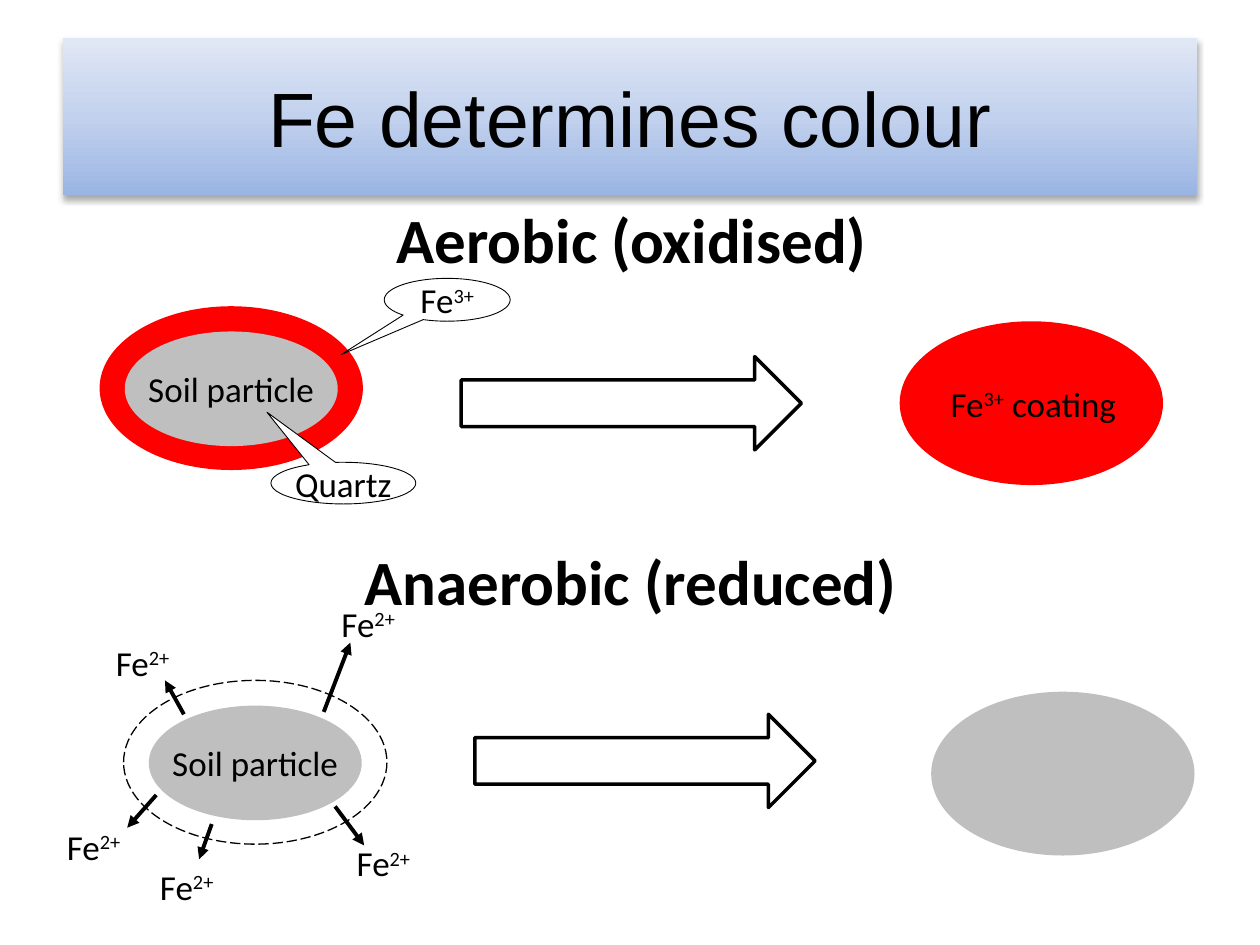
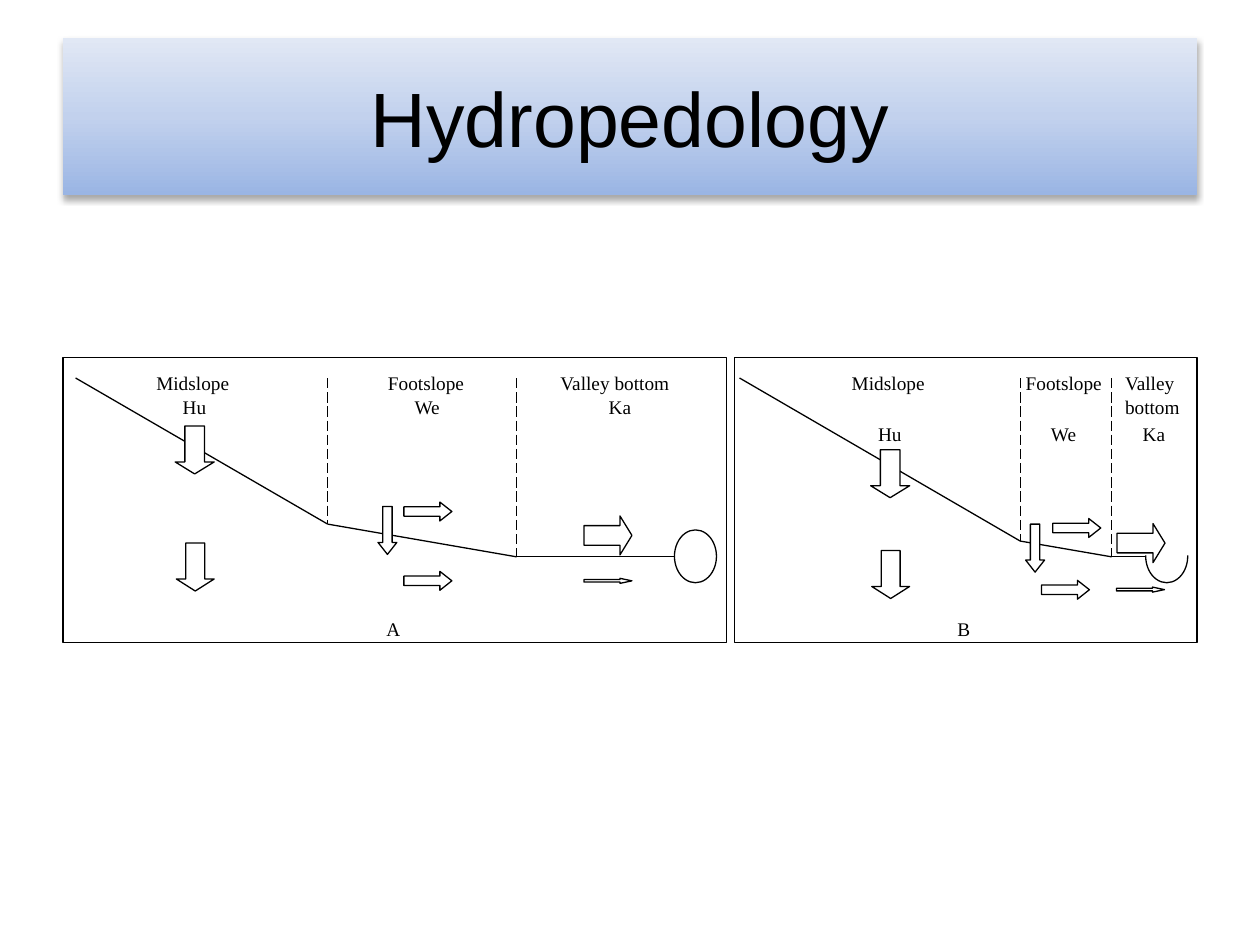
from copy import deepcopy
from itertools import pairwise

from lxml import etree
from pptx import Presentation
from pptx.dml.color import RGBColor
from pptx.enum.dml import MSO_LINE
from pptx.enum.shapes import MSO_CONNECTOR, MSO_SHAPE
from pptx.enum.text import MSO_ANCHOR, MSO_AUTO_SIZE, PP_ALIGN
from pptx.oxml.ns import qn
from pptx.util import Pt

RECT, ELLIPSE = MSO_SHAPE.RECTANGLE, MSO_SHAPE.OVAL
CALLOUT = MSO_SHAPE.OVAL_CALLOUT
DOWN, RIGHT = MSO_SHAPE.DOWN_ARROW, MSO_SHAPE.RIGHT_ARROW
STRAIGHT = MSO_CONNECTOR.STRAIGHT
DASHED = MSO_LINE.LONG_DASH
LEFT, CENTER = PP_ALIGN.LEFT, PP_ALIGN.CENTER
TOP, MIDDLE = MSO_ANCHOR.TOP, MSO_ANCHOR.MIDDLE
GROW, FIXED = MSO_AUTO_SIZE.SHAPE_TO_FIT_TEXT, MSO_AUTO_SIZE.NONE

COLORS = {
    "ink": "000000", "paper": "FFFFFF", "iron": "FF0000", "soil": "BFBFBF",
    "band_low": "9AB5E4", "band_mid": "C2D1ED", "band_high": "E1E8F5",
}
FORMATS = {
    "title": {"name": "Arial", "size": Pt(44)},
    "heading": {"name": "Calibri", "size": Pt(36), "bold": True},
    "body": {"name": "Calibri", "size": Pt(20)},
    "small": {"name": "Times New Roman", "size": Pt(11)},
}
DEFAULT_INSET = (7.2, 3.6)
FLOW_LENGTH, FLOW_HEAD = 27.4, 6.84


class Deck:
    """Holds the style and the current slide."""

    def __init__(self):
        self.file = Presentation()
        self.file.slide_width, self.file.slide_height = Pt(720), Pt(540)
        self.slide = None

    def new_slide(self):
        self.slide = self.file.slides.add_slide(self.file.slide_layouts[6])

    def color(self, name):
        return RGBColor.from_string(COLORS[name])

    def fill_text(self, shape, text, style, align=CENTER, anchor=MIDDLE,
                  inset=DEFAULT_INSET, wrap=False, grow=False):
        """Put text in a shape; parts between ^ signs are raised."""
        frame = shape.text_frame
        layout = {
            "word_wrap": wrap, "vertical_anchor": anchor,
            "margin_left": Pt(inset[0]), "margin_right": Pt(inset[0]),
            "margin_top": Pt(inset[1]), "margin_bottom": Pt(inset[1]),
            "auto_size": GROW if grow else FIXED,
        }
        for key, value in layout.items():
            setattr(frame, key, value)
        for number, content in enumerate(text.split("\n")):
            paragraph = frame.add_paragraph() if number else frame.paragraphs[0]
            paragraph.alignment = align
            for part, piece in enumerate(content.split("^")):
                if not piece:
                    continue
                run = paragraph.add_run()
                run.text = piece
                for key, value in FORMATS[style].items():
                    setattr(run.font, key, value)
                run.font.color.rgb = self.color("ink")
                if part % 2:
                    run.font._element.set("baseline", "30000")

    def shape(self, kind, box, fill=None, line=0, dash=None, adjust=()):
        shape = self.slide.shapes.add_shape(kind, *map(Pt, box))
        shape.shadow.inherit = False
        if fill:
            shape.fill.solid()
            shape.fill.fore_color.rgb = self.color(fill)
        else:
            shape.fill.background()
        if line:
            shape.line.color.rgb = self.color("ink")
            shape.line.width = Pt(line)
            if dash:
                shape.line.dash_style = dash
        else:
            shape.line.fill.background()
        for number, value in enumerate(adjust):
            shape.adjustments[number] = value
        return shape

    def line(self, start, end, width=0.75, dash=None, arrow=False):
        line = self.slide.shapes.add_connector(STRAIGHT, *map(Pt, (*start, *end)))
        line.line.color.rgb = self.color("ink")
        line.line.width = Pt(width)
        if dash:
            line.line.dash_style = dash
        properties = line._element.spPr
        if arrow:
            etree.SubElement(properties.find(qn("a:ln")), qn("a:tailEnd"), type="triangle")
        etree.SubElement(properties, qn("a:effectLst"))

    def label(self, text, box, style, inset=(0, 0)):
        label = self.slide.shapes.add_textbox(*map(Pt, box))
        self.fill_text(label, text, style, LEFT, TOP, inset, grow=True)

    def heading(self, text, box, **layout):
        self.fill_text(self.shape(RECT, box, "paper"), text, "heading",
                       anchor=TOP, grow=True, **layout)

    def flow(self, kind, x, y, thickness):
        """Water flow arrow of fixed length with a fixed head."""
        size = (thickness, FLOW_LENGTH) if kind == DOWN else (FLOW_LENGTH, thickness)
        self.shape(kind, (x, y, *size), "paper", 0.75,
                   adjust=(0.5, FLOW_HEAD / thickness))

    def title(self, text):
        band = self.shape(RECT, (36, 21.6, 648, 90))
        band.fill.gradient()
        band.fill.gradient_angle = 90
        properties = band._element.spPr
        stops = properties.find(".//" + qn("a:gsLst"))
        stops.insert(1, deepcopy(stops[0]))
        shades = ("band_low", "band_mid", "band_high")
        for number, (stop, shade) in enumerate(zip(band.fill.gradient_stops, shades)):
            stop.position = number / 2
            stop.color.rgb = self.color(shade)
        shadow = etree.SubElement(
            properties.find(qn("a:effectLst")), qn("a:outerShdw"),
            blurRad=str(Pt(3.5)), dist=str(Pt(2.2)), dir="5400000", rotWithShape="0")
        tint = etree.SubElement(shadow, qn("a:srgbClr"), val=COLORS["ink"])
        etree.SubElement(tint, qn("a:alpha"), val="32000")
        self.fill_text(band, text, "title", wrap=True)


RIM, CORE, COAT = (150.5, 93.6), (121.7, 65.5), 14.4


def particle(deck, x, y, **rim):
    deck.shape(ELLIPSE, (x, y, *RIM), **rim)
    core = deck.shape(ELLIPSE, (x + COAT, y + COAT, *CORE), "soil")
    deck.fill_text(core, "Soil particle", "body")


def iron_slide(deck):
    deck.new_slide()

    # Aerobic: iron coats the particle
    deck.heading("Aerobic (oxidised)", (217.4, 114.5, 287.3, 43.9), inset=(7.2, 0))
    coated = deck.shape(ELLIPSE, (514.1, 183.6, *RIM), "iron")
    deck.fill_text(coated, "Fe^3+^ coating", "body", LEFT)
    particle(deck, 56.9, 175, fill="iron")
    for text, box, pointer in (
        ("Quartz", (154.8, 264.2, 82.8, 23.8), (-0.528, -1.704)),
        ("Fe^3+^", (219.6, 159.1, 72, 24.5), (-0.842, 1.278)),
    ):
        callout = deck.shape(CALLOUT, box, "paper", 0.5, adjust=pointer)
        deck.fill_text(callout, text, "body", inset=(0, 0), wrap=True)

    # Anaerobic: iron leaves the particle
    deck.heading("Anaerobic (reduced)", (187.2, 306.7, 346.3, 51.1), wrap=True)
    particle(deck, 70.6, 388.8, fill="paper", line=0.75, dash=DASHED)
    deck.shape(ELLIPSE, (532.1, 395.3, *RIM), "soil")
    for start, end, ion in (
        ((105.1, 408.2), (94.3, 388.8), (66.2, 366.5)),
        ((121, 470.9), (113.8, 491), (91.4, 494.6)),
        ((191.5, 460.8), (208.1, 483.1), (203.8, 481)),
        ((185, 406.8), (200.2, 367.2), (195.1, 344.2)),
        ((89.3, 454.3), (72.7, 473), (38.2, 471.6)),
    ):
        deck.line(start, end, 2.25, arrow=True)
        deck.label("Fe^2+^", (*ion, 32.4, 24.5), "body")

    # Change from particle to result
    for x, y in ((263.5, 203.8), (271.4, 408.2)):
        deck.shape(RIGHT, (x, y, 194.4, 53.3), "paper", 2)
    deck.title("Fe determines colour")


HILL_TOP, POSITION_Y, TEXT_HEIGHT = 216, 212.4, 13.9

HILLSLOPES = (
    {
        "frame": (36, 379.4),
        "surface": ((43.2, HILL_TOP), (187.2, 299.5), (295.2, 318.2), (385.2, 318.2)),
        "stream_x": 385.4, "open_stream": False,
        "positions": (("Midslope", 89.3, 43.9, 0), ("Footslope", 214.6, 61.2, 7.2),
                      ("Valley bottom", 313.2, 82.1, 7.2)),
        "soil_y": 226.1,
        "soils": (("Hu", 104.4, 14.4), ("We", 236.9, 15.8), ("Ka", 347.8, 13.7)),
        "name": ("A", 213.8, 23.8),
        "flows": ((DOWN, 100.1, 243.4, 22.3), (DOWN, 100.8, 310.3, 21.6),
                  (DOWN, 216, 289.4, 10.8), (RIGHT, 230.8, 286.9, 10.8),
                  (RIGHT, 230.8, 326.5, 10.8), (RIGHT, 333.7, 294.8, 22.3),
                  (RIGHT, 333.7, 330.5, 2.9)),
    },
    {
        "frame": (419.8, 264.2),
        "surface": ((422.6, HILL_TOP), (583, 309.2), (635.2, 318.2), (654.5, 318.2)),
        "stream_x": 654.7, "open_stream": True,
        "positions": (("Midslope", 486.7, 43.9, 0), ("Footslope", 583.2, 51.8, 2.9),
                      ("Valley\nbottom", 635.8, 48.2, 7.2)),
        "soil_y": 241.2,
        "soils": (("Hu", 501.8, 14.4), ("We", 600.5, 15.8), ("Ka", 653, 13.7)),
        "name": ("B", 540, 23),
        "flows": ((DOWN, 497.5, 257, 22.3), (DOWN, 498.2, 314.6, 21.6),
                  (DOWN, 586.1, 299.5, 10.8), (RIGHT, 601.6, 296.3, 10.8),
                  (RIGHT, 595.1, 331.6, 10.8), (RIGHT, 638.3, 299.2, 22.3),
                  (RIGHT, 638, 335.5, 2.9)),
    },
)


def hillslope(deck, hill):
    # Surface, stream and borders between positions
    for start, end in pairwise(hill["surface"]):
        deck.line(start, end)
    deck.shape(ELLIPSE, (hill["stream_x"], 302.8, 24, 30.2), line=0.75)
    if hill["open_stream"]:
        deck.shape(RECT, (hill["stream_x"] - 2.4, 300.2, 30.2, 17.3), "paper")
    for x, y in hill["surface"][1:3]:
        deck.line((x, HILL_TOP), (x, y), dash=DASHED)

    # Names of positions and soils
    for text, x, width, inset in hill["positions"]:
        height = TEXT_HEIGHT * len(text.split("\n"))
        deck.label(text, (x, POSITION_Y, width, height), "small", (inset, 0))
    for text, x, width in hill["soils"]:
        deck.label(text, (x, hill["soil_y"], width, TEXT_HEIGHT), "small")
    text, x, width = hill["name"]
    deck.label(text, (x, 349.2, width, 21.6), "small", DEFAULT_INSET)

    # Water flows and frame
    for flow in hill["flows"]:
        deck.flow(*flow)
    left, width = hill["frame"]
    deck.shape(RECT, (left, 204.5, width, 162.7), line=0.75)


def hydropedology_slide(deck):
    deck.new_slide()
    for hill in HILLSLOPES:
        hillslope(deck, hill)
    deck.title("Hydropedology")


def main():
    deck = Deck()
    iron_slide(deck)
    hydropedology_slide(deck)
    deck.file.save("out.pptx")


if __name__ == "__main__":
    main()
